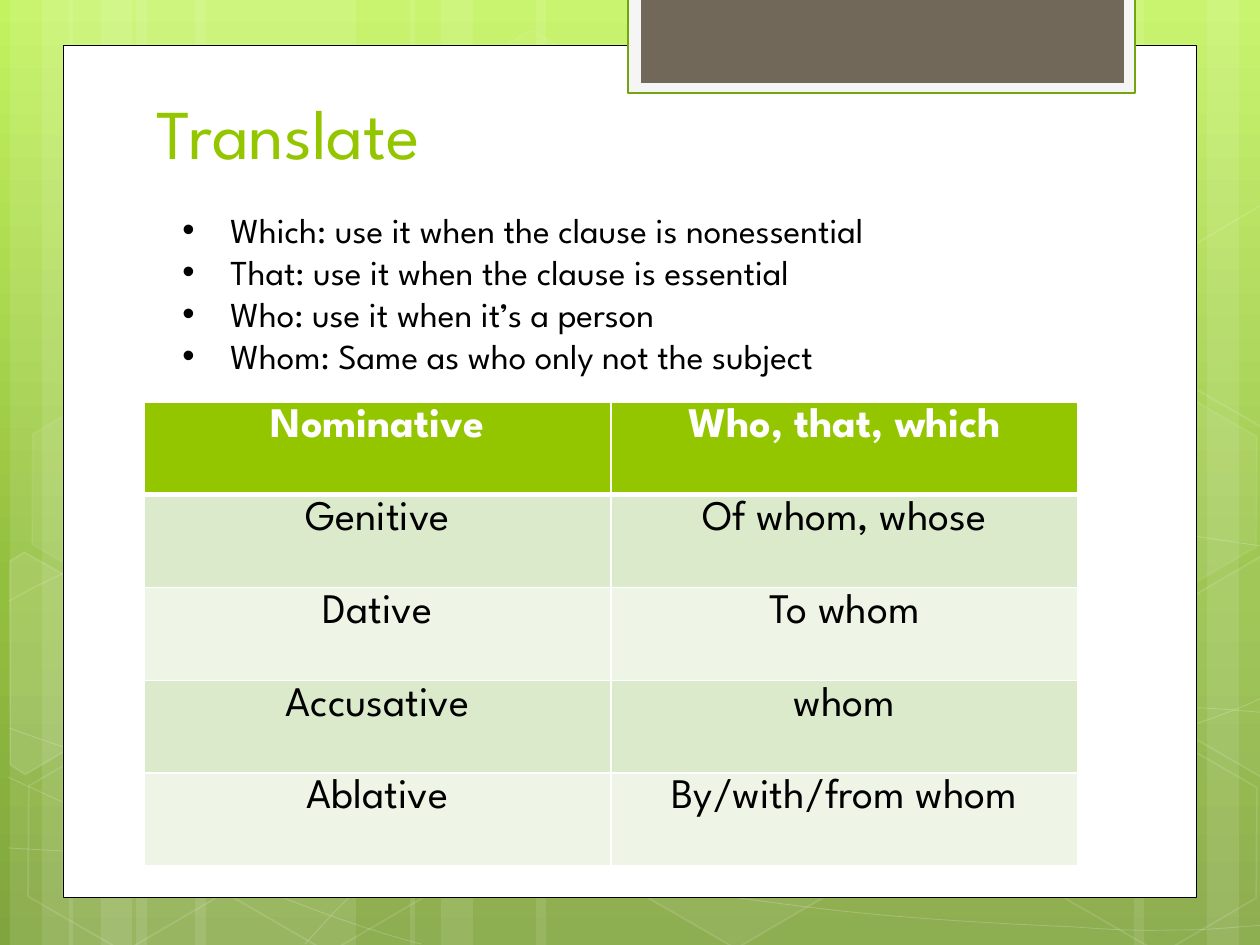
import copy
import math

import pptx
import pptx.dml.color
import pptx.enum.shapes
import pptx.enum.text
import pptx.oxml.ns
import pptx.util
from lxml import etree

PX = 914400 / 126
FONT = "League Spartan"
SHAPES = pptx.enum.shapes.MSO_SHAPE
ALIGN = pptx.enum.text.PP_ALIGN
ANCHOR = pptx.enum.text.MSO_ANCHOR
qn = pptx.oxml.ns.qn

TILT = 30
BANDS = [(136, 220), (10, 63), (42, 105), (195, 220), (69, 63), (101, 105),
         (924, 220), (1207, 63), (1134, 105), (536, 388), (410, 63), (441, 105)]
CURVES = [
    [(8, 848), (77, 852), (145, 856), (239, 854), (334, 853), (451, 851), (577, 838),
     (703, 825), (882, 801), (998, 777), (1113, 753), (1231, 716), (1269, 694)],
    [(9, 601), (45, 581), (82, 562), (152, 543), (224, 524), (326, 496), (437, 488),
     (549, 479), (685, 478), (824, 488), (963, 498), (1193, 537), (1269, 547)],
    [(8, 777), (160, 847), (311, 916), (421, 944)],
    [(9, 728), (48, 742), (88, 756), (161, 776), (234, 795), (344, 827), (450, 848),
     (554, 869), (687, 892), (791, 905), (896, 919), (1008, 924), (1075, 927),
     (1140, 932), (1158, 930), (1191, 930), (1223, 929), (1246, 926), (1269, 925)],
    [(305, 944), (328, 919), (350, 893), (381, 871), (412, 848), (454, 823), (489, 805),
     (524, 788), (546, 780), (592, 767), (638, 754), (722, 737), (766, 728),
     (811, 719), (818, 719), (857, 717), (896, 713), (958, 709), (1000, 708),
     (1045, 707), (1116, 708), (1116, 708), (1144, 708), (1173, 708), (1201, 708),
     (1223, 709), (1245, 711), (1256, 712), (1268, 713), (1264, 712), (1268, 713)],
]
HEXAGONS = [(421, 45, 4, 8), (626, 742, 6, 12), (14, 745, 0, 12), (18, 393, 7, 8),
            (219, 746, 0, 12), (949, 571, 10, 12), (1051, 747, 0, 12), (1051, 396, 7, 8)]
CUT_HEXAGONS = [
    ((45, 674), [(10, 561), (24, 552), (121, 607), (120, 718), (25, 774), (10, 765)], 10),
    ((1241, 655), [(1167, 611), (1261, 556), (1271, 562), (1271, 772), (1263, 777),
                   (1167, 722)], 4),
    ((1241, 304), [(1167, 261), (1261, 205), (1273, 212), (1271, 422), (1263, 427),
                   (1167, 372)], 0),
]
RULES = ["Which: use it when the clause is nonessential",
         "That: use it when the clause is essential",
         "Who: use it when it’s a person",
         "Whom: Same as who only not the subject"]
CASES = [("Nominative", "Who, that, which"), ("Genitive", "Of whom, whose"),
         ("Dative", "To whom"), ("Accusative", "whom"), ("Ablative", "By/with/from whom")]


def px(*lengths):
    return [pptx.util.Emu(round(length * PX)) for length in lengths]


def paint(color_format, color, alpha=100):
    color_format.rgb = pptx.dml.color.RGBColor.from_string(color)
    if alpha < 100:
        srgb = color_format._xFill.find(qn("a:srgbClr"))
        etree.SubElement(srgb, qn("a:alpha")).set("val", str(alpha * 1000))


def style(shape, fill=None, fill_alpha=100, line=None, line_alpha=100, width=1):
    shape.shadow.inherit = False
    if fill and fill_alpha:
        shape.fill.solid()
        paint(shape.fill.fore_color, fill, fill_alpha)
    else:
        shape.fill.background()
    if line:
        shape.line.width = pptx.util.Pt(width)
        shape.line.fill.solid()
        paint(shape.line.fill.fore_color, line, line_alpha)
    else:
        shape.line.fill.background()


def add_preset(slide, kind, box, **look):
    shape = slide.shapes.add_shape(kind, *px(*box))
    style(shape, **look)
    return shape


def add_outline(slide, points, close, **look):
    builder = slide.shapes.build_freeform(*points[0], scale=PX)
    builder.add_line_segments(points[1:], close=close)
    outline = builder.convert_to_shape()
    style(outline, **look)
    return outline


def bend(outline):
    segments = list(outline._element.iter(qn("a:lnTo")))
    for i in range(0, len(segments), 3):
        curve = etree.Element(qn("a:cubicBezTo"))
        segments[i].addprevious(curve)
        for segment in segments[i:i + 3]:
            curve.append(segment[0])
            segment.getparent().remove(segment)


def turn_back(point, center):
    x, y = point[0] - center[0], point[1] - center[1]
    cos, sin = math.cos(math.radians(TILT)), math.sin(math.radians(TILT))
    return center[0] + x * cos + y * sin, center[1] - x * sin + y * cos


def write(frame, text, size=20, color="000000", bold=False, align=ALIGN.LEFT,
          anchor=ANCHOR.TOP, bullet_indent=0):
    frame.word_wrap = True
    frame.vertical_anchor = anchor
    frame.text = text
    for paragraph in frame.paragraphs:
        paragraph.alignment = align
        font = paragraph.runs[0].font
        font.name, font.size, font.bold = FONT, pptx.util.Pt(size), bold
        paint(font.color, color)
        if bullet_indent:
            properties = paragraph._p.get_or_add_pPr()
            indent = px(bullet_indent)[0]
            properties.set("marL", str(indent))
            properties.set("indent", str(-indent))
            etree.SubElement(properties, qn("a:buFont")).set("typeface", "Arial")
            etree.SubElement(properties, qn("a:buChar")).set("char", "•")


def border(cell, bottom):
    properties = cell._tc.get_or_add_tcPr()
    sides = {"lnL": 1, "lnR": 1, "lnT": 1, "lnB": bottom}
    for index, (side, width) in enumerate(sides.items()):
        edge = etree.Element(qn("a:" + side), w=str(pptx.util.Pt(width)))
        solid = etree.SubElement(edge, qn("a:solidFill"))
        etree.SubElement(solid, qn("a:srgbClr")).set("val", "FFFFFF")
        properties.insert(index, edge)


def backdrop(slide, box):
    left, top, width, height = box
    fill = slide.background.fill
    fill.gradient()
    fill.gradient_angle = 270
    stop_list = next(slide.element.iter(qn("a:gsLst")))
    stop_list.insert(1, copy.deepcopy(stop_list[0]))
    stops = [("C3F35F", 0), ("93BF3F", 0.62), ("81A53E", 1)]
    for stop, (color, position) in zip(fill.gradient_stops, stops):
        stop.position = position
        paint(stop.color, color)
    for x, band_width in BANDS:
        add_preset(slide, SHAPES.RECTANGLE, (left + x, top, band_width, height),
                   fill="FFFFFF", fill_alpha=10)
    for knots in CURVES:
        points = [(left + x, top + y) for x, y in knots]
        bend(add_outline(slide, points, False, line="FFFFFF", line_alpha=20, width=0.5))
    for x, y, fill_alpha, line_alpha in HEXAGONS:
        hexagon = add_preset(slide, SHAPES.HEXAGON, (left + x, top + y, 220, 192),
                             fill="FFFFFF", fill_alpha=fill_alpha,
                             line="FFFFFF", line_alpha=line_alpha)
        hexagon.adjustments[0] = 0.285
        hexagon.rotation = TILT
    for center, corners, fill_alpha in CUT_HEXAGONS:
        upright = [turn_back(corner, center) for corner in corners]
        points = [(left + x, top + y) for x, y in upright]
        cut = add_outline(slide, points, True, fill="FFFFFF", fill_alpha=fill_alpha,
                          line="FFFFFF", line_alpha=12)
        cut.rotation = TILT


def page(slide, box):
    left, top, width, height = box
    add_preset(slide, SHAPES.RECTANGLE, box, fill="FFFFFF", line="000000", width=0.5)
    add_preset(slide, SHAPES.RECTANGLE, (left + 565, top - 48, 507, 96),
               fill="F5F5F5", line="74A510", width=1.25)
    add_preset(slide, SHAPES.RECTANGLE, (left + 578, top - 48, 483, 86), fill="71685A")


def text_block(slide, box, text, **format):
    write(slide.shapes.add_textbox(*px(*box)).text_frame, text, **format)


def case_table(slide, box):
    table = slide.shapes.add_table(len(CASES), 2, *px(*box)).table
    for r, case in enumerate(CASES):
        header = r == 0
        fill = "94C600" if header else ("EEF5E7", "DCEACC")[r % 2]
        for c, text in enumerate(case):
            cell = table.cell(r, c)
            cell.fill.solid()
            paint(cell.fill.fore_color, fill)
            border(cell, bottom=3 if header else 1)
            write(cell.text_frame, text, size=24, bold=header, align=ALIGN.CENTER,
                  color="FFFFFF" if header else "000000")


def main():
    deck = pptx.Presentation()
    deck.slide_width, deck.slide_height = px(1260, 945)
    slide = deck.slides.add_slide(deck.slide_layouts[6])
    backdrop(slide, (0, 0, 1260, 945))
    page(slide, (63, 45, 1134, 853))
    text_block(slide, (144, 23, 968, 157), "Translate", size=40, color="94C600",
               anchor=ANCHOR.BOTTOM)
    case_table(slide, (144, 402, 934, 464))
    text_block(slide, (170, 202, 871, 183), "\n".join(RULES), bullet_indent=48)
    deck.save("out.pptx")


if __name__ == "__main__":
    main()
